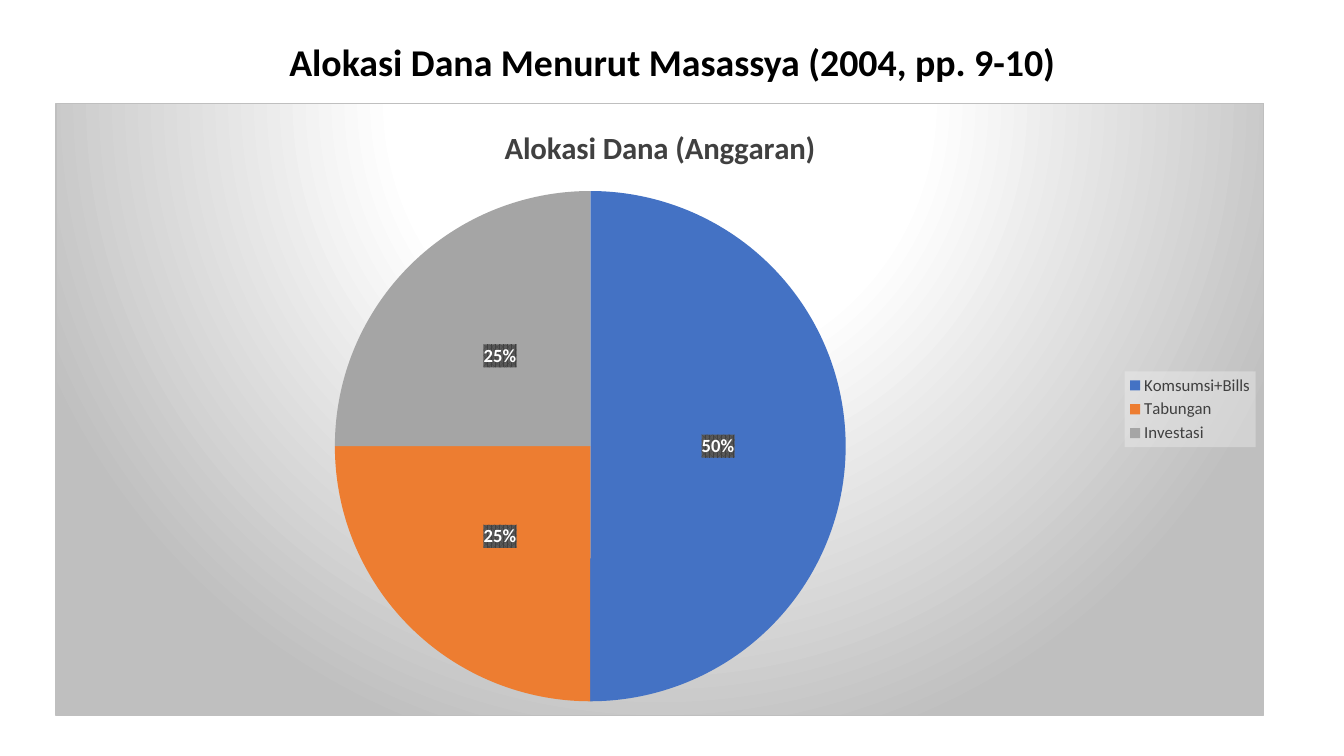
from lxml import etree
from pptx import Presentation, util as u
from pptx.chart.data import CategoryChartData
from pptx.dml.color import RGBColor
from pptx.enum import chart as charts, text
from pptx.oxml import ns

WIDTH, HEIGHT = u.Inches(13.33), u.Inches(7.5)
SLICES = {
    "Komsumsi+Bills": (50, "4472C4"),
    "Tabungan": (25, "ED7D31"),
    "Investasi": (25, "A5A5A5"),
}
BACKDROP = """<a:gradFill><a:gsLst>
<a:gs pos="0"><a:srgbClr val="FFFFFF"/></a:gs>
<a:gs pos="39000"><a:srgbClr val="FFFFFF"/></a:gs>
<a:gs pos="100000"><a:srgbClr val="BFBFBF"/></a:gs></a:gsLst>
<a:path path="circle"><a:fillToRect l="50000" t="-80000" r="50000" b="180000"/></a:path>
</a:gradFill>
<a:ln w="9525"><a:solidFill><a:srgbClr val="BFBFBF"/></a:solidFill></a:ln>"""
LEGEND_FILL = """<a:solidFill><a:srgbClr val="F2F2F2">
<a:alpha val="39000"/></a:srgbClr></a:solidFill>"""
LABEL_FILL = """<a:pattFill prst="pct75"><a:fgClr><a:srgbClr val="404040"/></a:fgClr>
<a:bgClr><a:srgbClr val="595959"/></a:bgClr></a:pattFill>"""


def shares(left, top, width, height):
    return [round(size * share / 100) for size, share in
            zip((WIDTH, HEIGHT, WIDTH, HEIGHT), (left, top, width, height))]


def color(value):
    return RGBColor.from_string(value)


def apply(target, values):
    for name, value in values.items():
        setattr(target, name, value)


def style(font, size, shade, bold=False):
    apply(font, {"name": "Calibri", "size": u.Pt(size), "bold": bold})
    font.color.rgb = color(shade)


def paint(element, fill):
    properties = etree.fromstring(
        f'<c:spPr xmlns:c="{ns.nsuri("c")}" xmlns:a="{ns.nsuri("a")}">{fill}</c:spPr>')
    element.find(ns.qn("c:txPr")).addprevious(properties)


def add_heading(page, content, area):
    frame = page.shapes.add_textbox(*area).text_frame
    apply(frame, {"word_wrap": True, "vertical_anchor": text.MSO_ANCHOR.MIDDLE})
    para = frame.paragraphs[0]
    apply(para, {"alignment": text.PP_ALIGN.CENTER, "line_spacing": 0.9})
    span = para.add_run()
    span.text = content
    style(span.font, 27, "000000", True)


def add_pie(page, title, slices, area):
    data = CategoryChartData()
    data.categories = list(slices)
    data.add_series(title, [value for value, _ in slices.values()])
    chart = page.shapes.add_chart(charts.XL_CHART_TYPE.PIE, *area, data).chart
    style(chart.font, 10, "000000")
    paint(chart._chartSpace, BACKDROP)
    chart.chart_title.text_frame.text = title
    style(chart.chart_title.text_frame.paragraphs[0].runs[0].font, 22, "404040", True)
    add_legend(chart)
    plot = chart.plots[0]
    plot.vary_by_categories = True
    for index, (_, shade) in enumerate(slices.values()):
        fill = plot.series[0].points[index].format.fill
        fill.solid()
        fill.fore_color.rgb = color(shade)
    add_labels(plot.series[0])


def add_legend(chart):
    chart.has_legend = True
    apply(chart.legend, {"position": charts.XL_LEGEND_POSITION.RIGHT,
                         "include_in_layout": False})
    style(chart.legend.font, 12, "404040")
    paint(chart.legend._element, LEGEND_FILL)


def add_labels(series):
    labels = series.data_labels
    apply(labels, {"show_percentage": True, "show_value": False,
                   "number_format": "0%", "number_format_is_linked": False,
                   "position": charts.XL_LABEL_POSITION.CENTER})
    style(labels.font, 13.3, "FFFFFF", True)
    paint(labels._element, LABEL_FILL)


def main():
    deck = Presentation()
    apply(deck, {"slide_width": WIDTH, "slide_height": HEIGHT})
    page = deck.slides.add_slide(deck.slide_layouts[6])
    add_heading(page, "Alokasi Dana Menurut Masassya (2004, pp. 9-10)",
                shares(6.9, 5.33, 86.27, 6.27))
    add_pie(page, "Alokasi Dana (Anggaran)", SLICES, shares(4.13, 13.6, 89.95, 81.07))
    deck.save("out.pptx")


if __name__ == "__main__":
    main()
